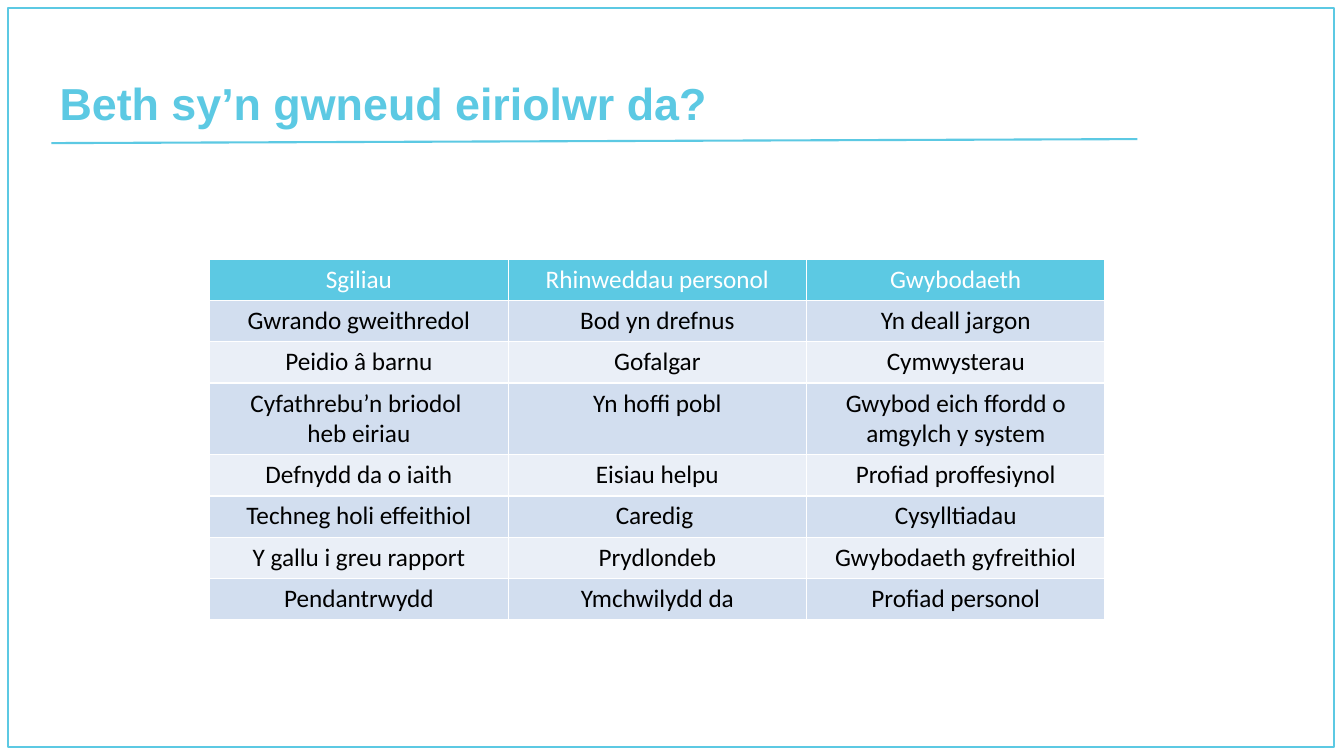
from lxml import etree
from pptx import Presentation
from pptx.dml.color import RGBColor
from pptx.enum.shapes import MSO_CONNECTOR, MSO_SHAPE
from pptx.enum.text import MSO_ANCHOR, PP_ALIGN
from pptx.oxml import parse_xml
from pptx.oxml.ns import nsdecls, qn
from pptx.util import Inches, Pt

STRAIGHT = MSO_CONNECTOR.STRAIGHT
RECTANGLE = MSO_SHAPE.RECTANGLE
BOTTOM = MSO_ANCHOR.BOTTOM
CENTER = PP_ALIGN.CENTER

COLORS = {
    "accent": "5CC9E3",
    "band_dark": "D2DEEF",
    "band_light": "EAEFF7",
    "white": "FFFFFF",
    "black": "000000",
}

ROWS = [
    ("Sgiliau", "Rhinweddau personol", "Gwybodaeth"),
    ("Gwrando gweithredol", "Bod yn drefnus", "Yn deall jargon"),
    ("Peidio â barnu", "Gofalgar", "Cymwysterau"),
    ("Cyfathrebu’n briodol \vheb eiriau", "Yn hoffi pobl",
     "Gwybod eich ffordd o amgylch y system"),
    ("Defnydd da o iaith", "Eisiau helpu", "Profiad proffesiynol"),
    ("Techneg holi effeithiol", "Caredig ", "Cysylltiadau"),
    ("Y gallu i greu rapport", "Prydlondeb", "Gwybodaeth gyfreithiol"),
    ("Pendantrwydd", "Ymchwilydd da", "Profiad personol"),
]
TALL_ROW = 3


def color(name):
    return RGBColor.from_string(COLORS[name])


def format_font(font, values, color_name):
    for name, value in values.items():
        setattr(font, name, value)
    font.color.rgb = color(color_name)


deck = Presentation()
deck.slide_width = Inches(13.33)
deck.slide_height = Inches(7.5)
page = deck.slides.add_slide(deck.slide_layouts[5])

# Page frame
frame = page.shapes.add_shape(
    RECTANGLE, Inches(0.08), Inches(0.08), Inches(13.15), Inches(7.33))
frame.shadow.inherit = False
frame.fill.background()
frame.line.color.rgb = color("accent")
frame.line.width = Pt(1)

# Line under the title
rule = page.shapes.add_connector(
    STRAIGHT, Inches(0.51), Inches(1.42), Inches(11.28), Inches(1.38))
rule.line.color.rgb = color("accent")
rule.line.width = Pt(1.5)
etree.SubElement(rule._element.spPr, qn("a:effectLst"))

# Title
title = page.shapes.title
title.left, title.top = Inches(0.49), Inches(0.28)
title.width, title.height = Inches(10.48), Inches(1.06)
title.text_frame.text = "Beth sy’n gwneud eiriolwr da?"
title.text_frame.vertical_anchor = BOTTOM
para = title.text_frame.paragraphs[0]
para.alignment = PP_ALIGN.LEFT
para.line_spacing = 0.9
format_font(para.runs[0].font,
            {"name": "Arial", "size": Pt(32), "bold": True}, "accent")

# Table of skills, qualities and knowledge
table = page.shapes.add_table(
    len(ROWS), len(ROWS[0]),
    Inches(2.08), Inches(2.57), Inches(8.89), Inches(3.54)).table
for column in table.columns:
    column.width = Inches(2.96)

for row_index, labels in enumerate(ROWS):
    table.rows[row_index].height = Inches(0.7 if row_index == TALL_ROW else 0.41)
    is_header = row_index == 0
    if is_header:
        fill_name = "accent"
    else:
        fill_name = "band_dark" if row_index % 2 else "band_light"

    for column_index, label in enumerate(labels):
        cell = table.cell(row_index, column_index)
        cell.text = label
        para = cell.text_frame.paragraphs[0]
        para.alignment = CENTER
        for span in para.runs:
            format_font(span.font,
                        {"name": "Calibri", "size": Pt(18), "bold": False},
                        "white" if is_header else "black")

        # White borders go before the fill
        cell_format = cell._tc.get_or_add_tcPr()
        for side in ("lnL", "lnR", "lnT", "lnB"):
            cell_format.append(parse_xml(
                f'<a:{side} {nsdecls("a")} w="{Pt(1)}"><a:solidFill>'
                f'<a:srgbClr val="{COLORS["white"]}"/></a:solidFill></a:{side}>'))
        cell.fill.solid()
        cell.fill.fore_color.rgb = color(fill_name)

deck.save("out.pptx")
